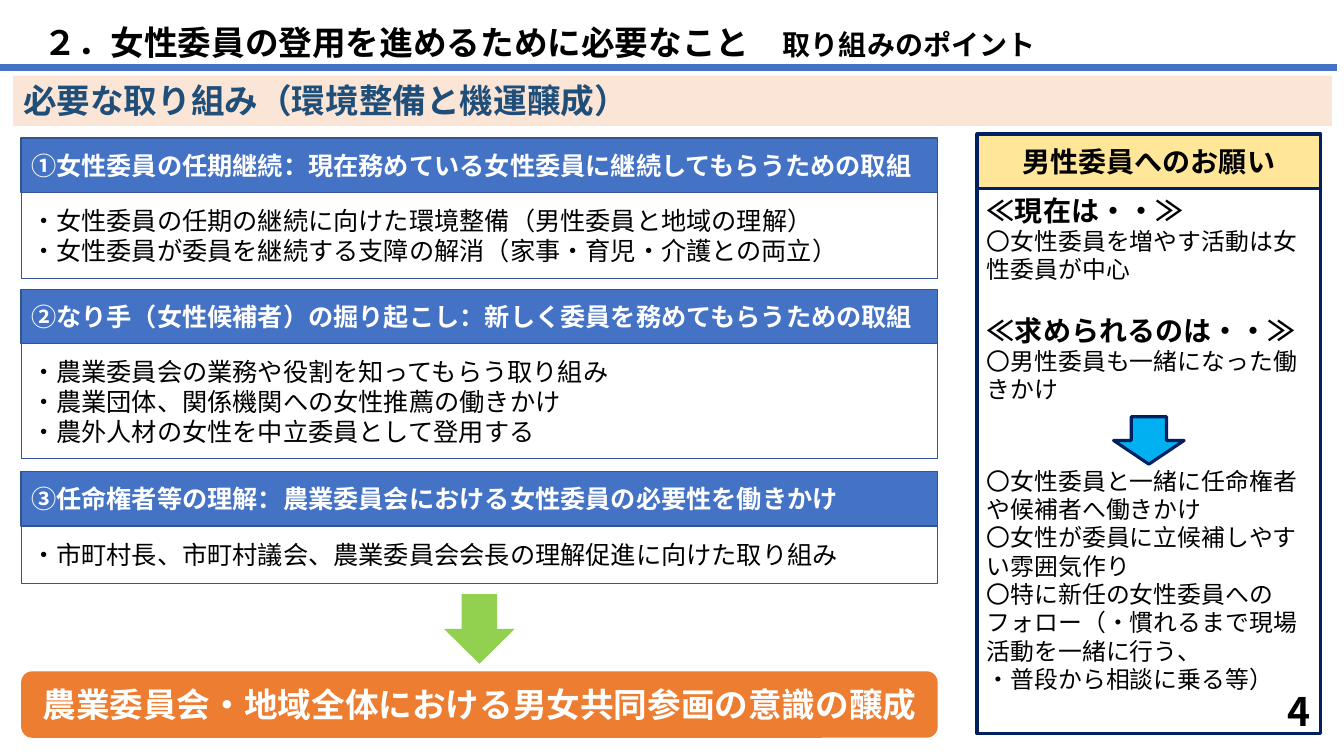
from dataclasses import dataclass

from lxml.etree import SubElement
from pptx import Presentation
from pptx.dml.color import RGBColor
from pptx.enum.shapes import MSO_CONNECTOR, MSO_SHAPE
from pptx.enum.text import MSO_ANCHOR, PP_ALIGN
from pptx.oxml.ns import qn
from pptx.util import Inches, Pt

# Grid: 133.3 columns by 75 rows, one cell is a tenth of an inch
COLUMNS, ROWS = 133.3, 75
FONT = "Noto Sans CJK JP"
LINE_RATIO = 1.19
BLACK, WHITE, NAVY, BLUE, BLUE_EDGE = "000000", "FFFFFF", "002060", "4472C4", "325491"


@dataclass(frozen=True)
class Box:
    column: float
    row: float
    columns: float
    rows: float


@dataclass(frozen=True)
class Line:
    text: str
    size: float = 18
    bold: bool = False
    color: str = BLACK
    align: PP_ALIGN = PP_ALIGN.LEFT
    before: float = 0
    tail: str = ""
    tail_size: float = 20


@dataclass(frozen=True)
class Measure:
    row: float
    body_rows: float
    heading: str
    points: tuple[str, ...]


def cells(count: float) -> int:
    return Inches(count / 10)


def rgb(color: str) -> RGBColor:
    return RGBColor.from_string(color)


def write(shape, lines: list[Line], anchor=MSO_ANCHOR.MIDDLE) -> None:
    frame = shape.text_frame
    frame.word_wrap = True
    frame.vertical_anchor = anchor
    for index, line in enumerate(lines):
        paragraph = frame.add_paragraph() if index else frame.paragraphs[0]
        paragraph.alignment = line.align
        paragraph.line_spacing = Pt(round(line.size * LINE_RATIO, 1))
        paragraph.space_before = Pt(line.before)
        paragraph.add_run().text = line.text
        font = paragraph.font
        font.size, font.bold, font.name = Pt(line.size), line.bold, FONT
        font.color.rgb = rgb(line.color)
        # East Asian typeface
        defaults = paragraph._p.pPr.find(qn("a:defRPr"))
        SubElement(defaults, qn("a:ea"), typeface=FONT)
        if line.tail:
            tail = paragraph.add_run()
            tail.text = line.tail
            tail.font.size = Pt(line.tail_size)


def add_block(slide, kind: MSO_SHAPE, box: Box, fill: str = "", edge: str = "", weight: float = 1):
    shape = slide.shapes.add_shape(
        kind, cells(box.column), cells(box.row), cells(box.columns), cells(box.rows))
    shape.shadow.inherit = False
    if fill:
        shape.fill.solid()
        shape.fill.fore_color.rgb = rgb(fill)
    else:
        shape.fill.background()
    if edge:
        shape.line.color.rgb = rgb(edge)
        shape.line.width = Pt(weight)
    else:
        shape.line.fill.background()
    return shape


def add_label(slide, box: Box, line: Line, anchor: MSO_ANCHOR) -> None:
    label = slide.shapes.add_textbox(
        cells(box.column), cells(box.row), cells(box.columns), cells(box.rows))
    write(label, [line], anchor)


LEFT, WIDTH, HEADING_ROWS = 2.1, 90.9, 5.4
PANEL_LEFT, PANEL_TOP, PANEL_WIDTH, PANEL_ROWS = 96.9, 13.3, 34.1, 59.5

MEASURES = [
    Measure(13.7, 8.5, "①女性委員の任期継続：現在務めている女性委員に継続してもらうための取組", (
        "・女性委員の任期の継続に向けた環境整備（男性委員と地域の理解）",
        "・女性委員が委員を継続する支障の解消（家事・育児・介護との両立）")),
    Measure(28.7, 11.4, "②なり手（女性候補者）の掘り起こし：新しく委員を務めてもらうための取組", (
        "・農業委員会の業務や役割を知ってもらう取り組み",
        "・農業団体、関係機関への女性推薦の働きかけ",
        "・農外人材の女性を中立委員として登用する")),
    Measure(46.8, 5.7, "③任命権者等の理解：農業委員会における女性委員の必要性を働きかけ", (
        "・市町村長、市町村議会、農業委員会会長の理解促進に向けた取り組み",)),
]

REQUESTS = [
    Line("≪現在は・・≫", 20, True),
    Line("〇女性委員を増やす活動は女性委員が中心", 17),
    Line("≪求められるのは・・≫", 20, True, before=21.4),
    Line("〇男性委員も一緒になった働きかけ", 17),
    Line("〇女性委員と一緒に任命権者や候補者へ働きかけ", 17, before=45.4),
    Line("〇女性が委員に立候補しやすい雰囲気作り", 17),
    Line("〇特に新任の女性委員へのフォロー（・慣れるまで現場活動を一緒に行う、", 17),
    Line("・普段から相談に乗る等）", 17),
]


def add_header(slide) -> None:
    band = add_block(slide, MSO_SHAPE.RECTANGLE, Box(1.3, 7.5, 130.8, 5), "FBE5D6")
    write(band, [Line("必要な取り組み（環境整備と機運醸成）", 24, True, "1F4E79")], MSO_ANCHOR.TOP)
    rule = slide.shapes.add_connector(
        MSO_CONNECTOR.STRAIGHT, 0, cells(6.7), cells(132.6), cells(6.7))
    rule.line.color.rgb = rgb(BLUE)
    rule.line.width = Pt(4.5)
    SubElement(rule._element.spPr, qn("a:effectLst"))
    title = Line("　２．女性委員の登用を進めるために必要なこと　", 24, True, tail="取り組みのポイント")
    add_label(slide, Box(0, 1.7, COLUMNS, 5), title, MSO_ANCHOR.TOP)


def add_measure(slide, measure: Measure) -> None:
    heading = add_block(slide, MSO_SHAPE.RECTANGLE,
                        Box(LEFT, measure.row, WIDTH, HEADING_ROWS), BLUE, BLUE_EDGE)
    write(heading, [Line(measure.heading, bold=True, color=WHITE)])
    body = add_block(slide, MSO_SHAPE.RECTANGLE,
                     Box(LEFT, measure.row + HEADING_ROWS, WIDTH, measure.body_rows),
                     WHITE, BLUE_EDGE, 0.75)
    write(body, [Line(point) for point in measure.points])


def add_goal(slide) -> None:
    add_block(slide, MSO_SHAPE.DOWN_ARROW, Box(44.05, 58.95, 7, 6.9), "92D050")
    goal = add_block(slide, MSO_SHAPE.ROUNDED_RECTANGLE, Box(LEFT, 66.6, WIDTH, 6.6), "ED7D31")
    write(goal, [Line("農業委員会・地域全体における男女共同参画の意識の醸成", 24, True, WHITE,
                      PP_ALIGN.CENTER)])


def add_request_panel(slide) -> None:
    requests = add_block(
        slide, MSO_SHAPE.RECTANGLE,
        Box(PANEL_LEFT, PANEL_TOP + HEADING_ROWS, PANEL_WIDTH, PANEL_ROWS - HEADING_ROWS),
        edge=NAVY, weight=2.25)
    write(requests, REQUESTS, MSO_ANCHOR.TOP)
    heading = add_block(slide, MSO_SHAPE.RECTANGLE,
                        Box(PANEL_LEFT, PANEL_TOP, PANEL_WIDTH, HEADING_ROWS),
                        "FFE699", NAVY, 2.25)
    write(heading, [Line("男性委員へのお願い", 20, True, align=PP_ALIGN.CENTER)])
    add_block(slide, MSO_SHAPE.DOWN_ARROW, Box(110.45, 41.35, 7, 4.7), "00B0F0", NAVY, 2.25)


def main() -> None:
    deck = Presentation()
    deck.slide_width, deck.slide_height = cells(COLUMNS), cells(ROWS)
    slide = deck.slides.add_slide(deck.slide_layouts[6])
    add_header(slide)
    for measure in MEASURES:
        add_measure(slide, measure)
    add_goal(slide)
    # Page number
    add_label(slide, Box(101, 68.5, 30, 4), Line("4", 28, True, align=PP_ALIGN.RIGHT),
              MSO_ANCHOR.MIDDLE)
    add_request_panel(slide)
    deck.save("out.pptx")


if __name__ == "__main__":
    main()
